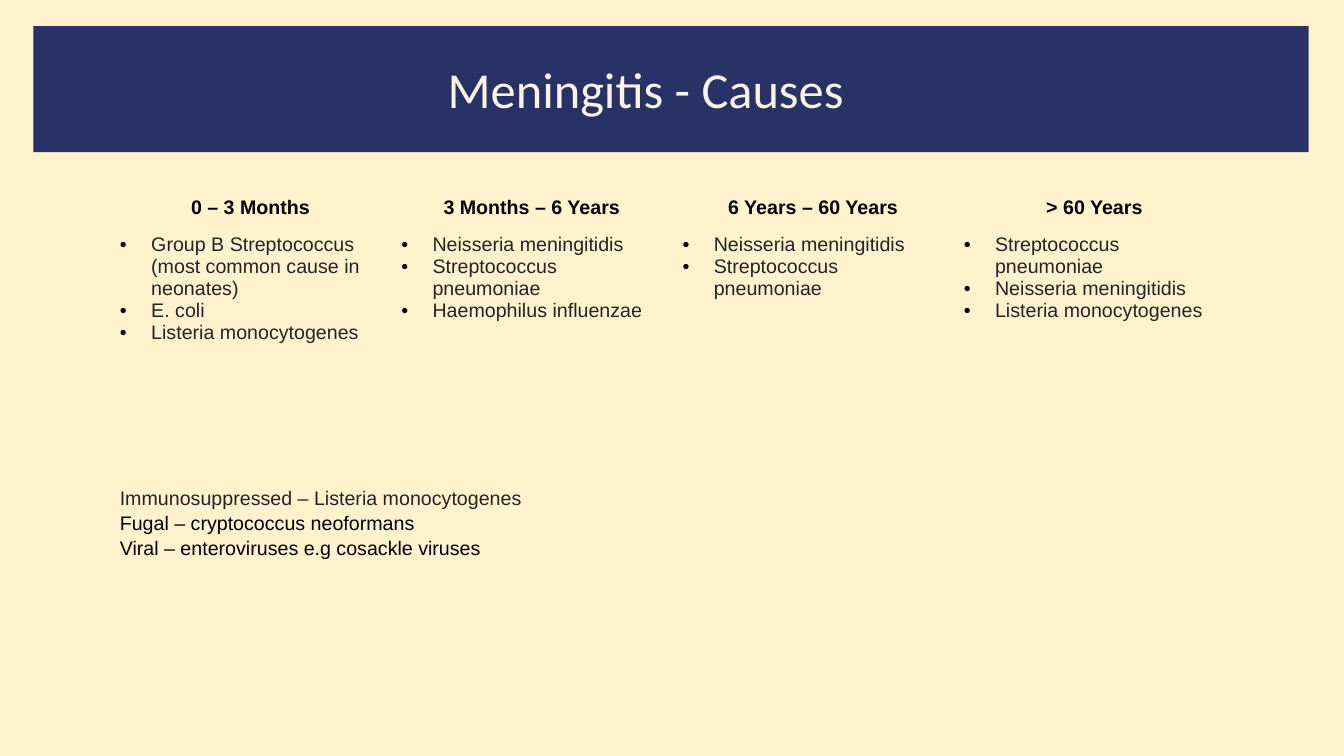
import pptx
import pptx.util
import pptx.dml.color
import pptx.enum.shapes
import pptx.enum.text
import pptx.oxml
import pptx.oxml.ns
from pptx.util import Inches

ALIGN = pptx.enum.text.PP_ALIGN
NO_GRID = "{2D5ABB26-0587-4C30-8999-92F81FD0307C}"
CAUSES = {
    "0 – 3 Months": ["Group B Streptococcus (most common cause in neonates)",
                     "E. coli", "Listeria monocytogenes"],
    "3 Months – 6 Years": ["Neisseria meningitidis", "Streptococcus pneumoniae",
                           "Haemophilus influenzae"],
    "6 Years – 60 Years": ["Neisseria meningitidis", "Streptococcus pneumoniae"],
    "> 60 Years": ["Streptococcus pneumoniae", "Neisseria meningitidis",
                   "Listeria monocytogenes"],
}
NOTES = [
    ("Immunosuppressed – Listeria monocytogenes", "212529"),
    ("Fugal – cryptococcus neoformans", "000000"),
    ("Viral – enteroviruses e.g cosackle viruses", "000000"),
]


def paint(color):
    return pptx.dml.color.RGBColor.from_string(color)


class Page:
    """Holds the style and the current slide."""
    ground, navy, cream = "FFF2CC", "293267", "F8F4E4"
    black, gray = "000000", "212529"
    font, size = "Arial", 14

    def __init__(self, deck):
        self.slide = deck.slides.add_slide(deck.slide_layouts[5])
        self.shapes = self.slide.shapes
        fill = self.slide.background.fill
        fill.solid()
        fill.fore_color.rgb = paint(self.ground)

    def add_run(self, para, text, color, font=font, size=size, bold=False):
        run = para.add_run()
        run.text = text
        run.font.name = font
        run.font.size = pptx.util.Pt(size)
        run.font.bold = bold
        run.font.color.rgb = paint(color)

    def band(self, *box):
        bar = self.shapes.add_shape(pptx.enum.shapes.MSO_SHAPE.RECTANGLE,
                                    *map(Inches, box))
        bar.shadow.inherit = False
        bar.fill.solid()
        bar.fill.fore_color.rgb = paint(self.navy)
        bar.line.fill.background()

    def title(self, text, *box):
        """Fill the title placeholder and bring it in front of the band."""
        head = self.shapes.title
        head.left, head.top, head.width, head.height = map(Inches, box)
        frame = head.text_frame
        frame.vertical_anchor = pptx.enum.text.MSO_ANCHOR.TOP
        frame.auto_size = pptx.enum.text.MSO_AUTO_SIZE.NONE
        para = frame.paragraphs[0]
        para.alignment = ALIGN.LEFT
        self.add_run(para, text, self.cream, "Calibri", 36)
        self.shapes._spTree.append(head._element)

    def notes(self, lines, *box):
        frame = self.shapes.add_textbox(*map(Inches, box)).text_frame
        frame.word_wrap = True
        for i, (text, color) in enumerate(lines):
            para = frame.add_paragraph() if i else frame.paragraphs[0]
            if i:
                para.space_before = pptx.util.Pt(1)
            self.add_run(para, text, color)

    def bullet(self, para):
        props = para._p.get_or_add_pPr()
        props.set("marL", str(Inches(0.31)))
        props.set("indent", str(Inches(-0.31)))
        space = pptx.oxml.ns.nsdecls("a")
        for xml in (f'<a:buClr {space}><a:srgbClr val="{self.black}"/></a:buClr>',
                    f'<a:buFont {space} typeface="Arial"/>',
                    f'<a:buChar {space} char="•"/>'):
            props.append(pptx.oxml.parse_xml(xml))

    def table(self, data, left, top, width, heights):
        """Draw one column per key, with its values as a bullet list."""
        frame = self.shapes.add_table(2, len(data), Inches(left), Inches(top),
                                      Inches(width * len(data)), Inches(sum(heights)))
        grid = frame.table
        grid.first_row = grid.horz_banding = False
        grid._tbl.tblPr.find(pptx.oxml.ns.qn("a:tableStyleId")).text = NO_GRID
        for row, height in zip(grid.rows, heights):
            row.height = Inches(height)
        for col, (age, germs) in enumerate(data.items()):
            grid.columns[col].width = Inches(width)
            head, body = grid.cell(0, col), grid.cell(1, col)
            for cell in (head, body):
                cell.fill.background()
            para = head.text_frame.paragraphs[0]
            para.alignment = ALIGN.CENTER
            self.add_run(para, age, self.black, bold=True)
            frame = body.text_frame
            for i, germ in enumerate(germs):
                para = frame.add_paragraph() if i else frame.paragraphs[0]
                self.bullet(para)
                self.add_run(para, germ, self.gray)


def main():
    deck = pptx.Presentation()
    deck.slide_width, deck.slide_height = Inches(13.33), Inches(7.5)
    page = Page(deck)
    page.band(0.33, 0.26, 12.65, 1.25)
    page.title("Meningitis - Causes", 4.34, 0.53, 5.57, 0.71)
    page.notes(NOTES, 1.09, 4.77, 4.2, 1.04)
    page.table(CAUSES, 1.09, 1.9, 2.79, (0.37, 1.36))
    deck.save("out.pptx")


if __name__ == "__main__":
    main()
